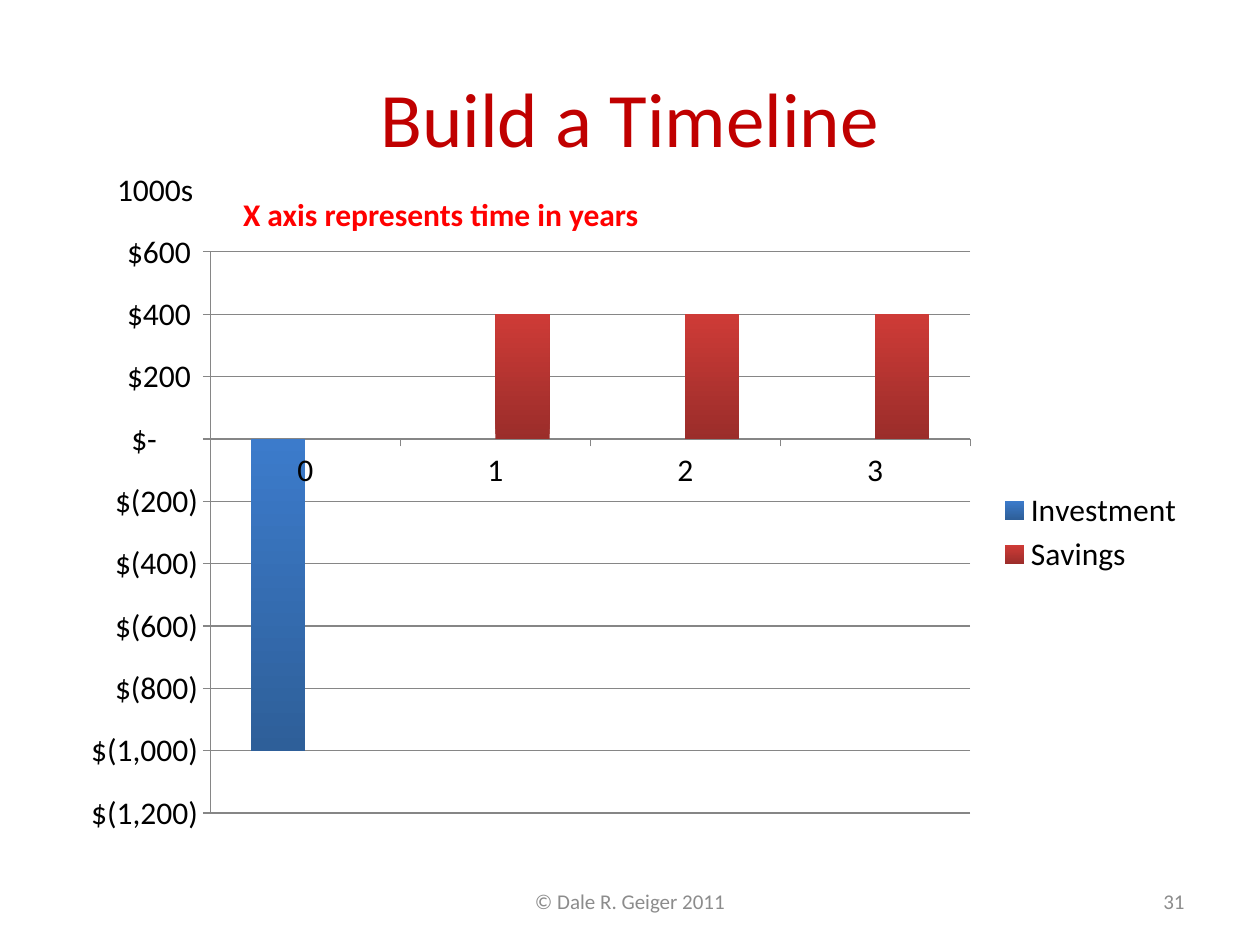
from lxml import etree
from pptx import Presentation
from pptx.chart.data import CategoryChartData
from pptx.dml.color import RGBColor
from pptx.enum.chart import XL_CHART_TYPE, XL_LEGEND_POSITION, XL_TICK_MARK
from pptx.enum.text import MSO_ANCHOR, PP_ALIGN
from pptx.oxml.ns import qn
from pptx.util import Cm, Pt

COLUMNS = XL_CHART_TYPE.COLUMN_CLUSTERED
LEGEND_RIGHT = XL_LEGEND_POSITION.RIGHT
TICK_OUT = XL_TICK_MARK.OUTSIDE
TOP, MIDDLE = MSO_ANCHOR.TOP, MSO_ANCHOR.MIDDLE
LEFT, CENTER, RIGHT = PP_ALIGN.LEFT, PP_ALIGN.CENTER, PP_ALIGN.RIGHT

FONT = "Calibri"
ACCOUNTING = r'_("$"* #,##0_);_("$"* \(#,##0\);_("$"* "-"??_);_(@_)'
COLORS = {
    "title": "C00000",
    "note": "FF0000",
    "text": "000000",
    "footer": "8C8C8C",
    "axis": "868686",
}
YEARS = ["0", "1", "2", "3"]
# name, values, (bottom colour, top colour)
CASH_FLOWS = [
    ("Investment", [-1000, None, None, None], ("2E5F99", "3C7BCB")),
    ("Savings ", [None, 400, 400, 400], ("9B2D2A", "CE3B37")),
]


def rgb(name):
    return RGBColor.from_string(COLORS[name])


def set_font(font, size, color, bold=False):
    font.name = FONT
    font.size = Pt(size)
    font.bold = bold
    font.color.rgb = rgb(color)


def add_text(slide, text, box, size, color, align=LEFT, anchor=TOP,
             bold=False, wrap=True):
    frame = slide.shapes.add_textbox(*map(Cm, box)).text_frame
    frame.word_wrap = wrap
    frame.vertical_anchor = anchor
    paragraph = frame.paragraphs[0]
    paragraph.text = text
    paragraph.alignment = align
    set_font(paragraph.font, size, color, bold)


def style_line(line):
    line.color.rgb = rgb("axis")
    line.width = Pt(0.75)


def fix_plot_area(chart, x, y, w, h):
    """Place the inner plot area, in fractions of the chart."""
    plot_area = chart.plots[0]._element.getparent()
    for old in plot_area.findall(qn("c:layout")):
        plot_area.remove(old)
    layout = etree.Element(qn("c:layout"))
    manual = etree.SubElement(layout, qn("c:manualLayout"))
    settings = [("layoutTarget", "inner"), ("xMode", "edge"), ("yMode", "edge"),
                ("x", x), ("y", y), ("w", w), ("h", h)]
    for tag, value in settings:
        etree.SubElement(manual, qn(f"c:{tag}")).set("val", str(value))
    plot_area.insert(0, layout)


def fill_upward(fill, colors):
    """Shade from the bottom colour to the top colour."""
    fill.gradient()
    fill.gradient_angle = 90
    for stop, color in zip(fill.gradient_stops, colors):
        stop.color.rgb = RGBColor.from_string(color)


def add_timeline(slide, box):
    data = CategoryChartData()
    data.categories = YEARS
    for name, values, _ in CASH_FLOWS:
        data.add_series(name, values)
    chart = slide.shapes.add_chart(COLUMNS, *map(Cm, box), data).chart
    set_font(chart.font, 18, "text")
    chart.has_title = False
    chart.has_legend = True
    chart.legend.position = LEGEND_RIGHT
    chart.legend.include_in_layout = False

    plot = chart.plots[0]
    plot.gap_width = 150
    plot.overlap = 0
    plot.vary_by_categories = False
    for series, (_, _, colors) in zip(plot.series, CASH_FLOWS):
        series.invert_if_negative = False
        fill_upward(series.format.fill, colors)

    for axis in (chart.category_axis, chart.value_axis):
        axis.major_tick_mark = TICK_OUT
        style_line(axis.format.line)
    amounts = chart.value_axis
    amounts.minimum_scale, amounts.maximum_scale = -1200, 600
    amounts.major_unit = 200
    amounts.tick_labels.number_format = ACCOUNTING
    amounts.tick_labels.number_format_is_linked = False
    style_line(amounts.major_gridlines.format.line)
    fix_plot_area(chart, 0.13, 0.05, 0.67, 0.9)


def main():
    prs = Presentation()
    prs.slide_width, prs.slide_height = Cm(25.4), Cm(19.05)
    slide = prs.slides.add_slide(prs.slide_layouts[6])

    add_text(slide, "Build a Timeline", (1.27, 0.76, 22.86, 3.18), 44, "title",
             CENTER, MIDDLE)
    add_timeline(slide, (1.27, 4.45, 22.86, 12.57))
    add_text(slide, "X axis represents time in years", (4.65, 3.81, 8.56, 1.02),
             18, "note", bold=True, wrap=False)
    add_text(slide, "1000s", (2.11, 3.3, 2.06, 1.02), 18, "text", wrap=False)
    add_text(slide, "© Dale R. Geiger 2011", (8.68, 17.65, 8.04, 1.02), 12,
             "footer", CENTER, MIDDLE)
    add_text(slide, "31", (18.2, 17.65, 5.93, 1.02), 12, "footer", RIGHT, MIDDLE)
    prs.save("out.pptx")


if __name__ == "__main__":
    main()
